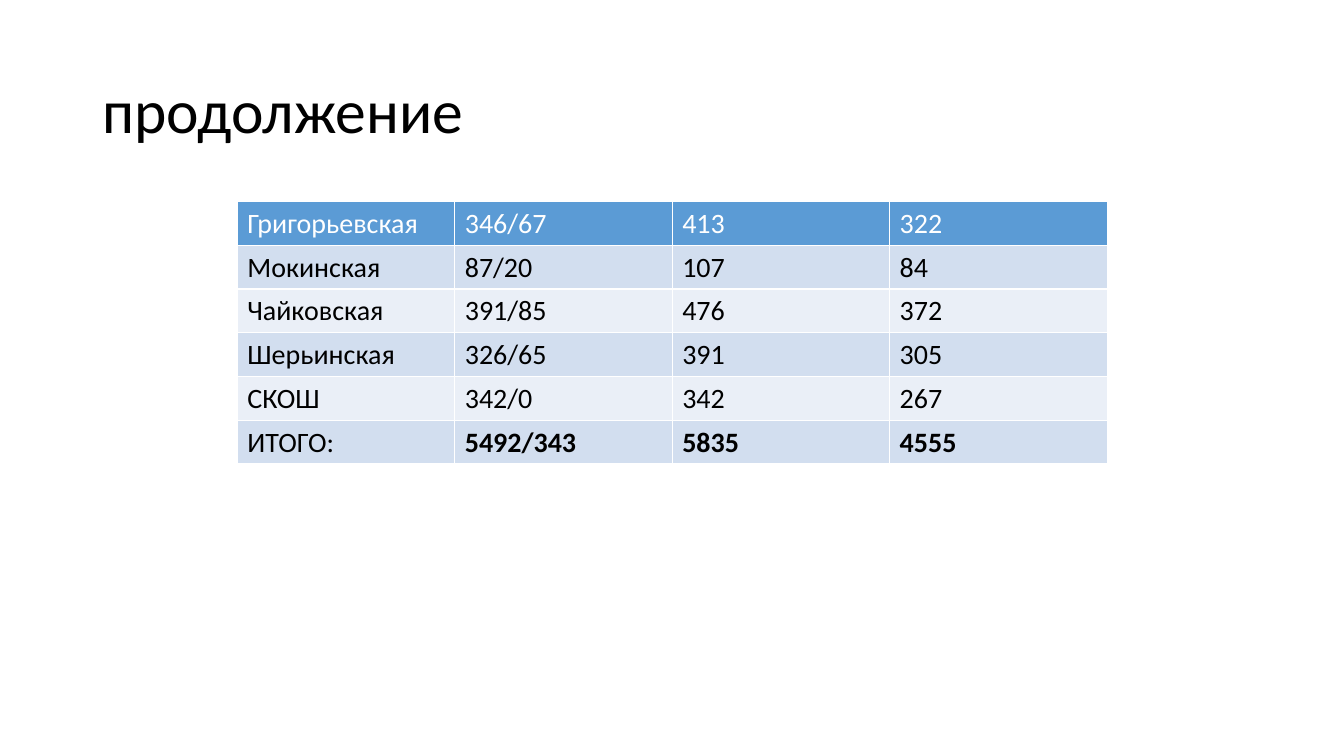
from pptx import Presentation
from pptx.dml.color import RGBColor
from pptx.enum.text import MSO_ANCHOR
from pptx.util import Cm, Pt


def color(value):
    return RGBColor.from_string(value)


class SlideBuilder:
    FONT = "Calibri"
    BLACK, WHITE = "000000", "FFFFFF"
    HEADER, BANDS = "5B9BD5", ("EAEFF7", "D2DEEF")

    def __init__(self, s):
        self.s = s

    def add_text(self, tf, text, size, text_color, bold=False):
        p = tf.paragraphs[0]
        r = p.add_run()
        r.text = text
        style = {"name": self.FONT, "size": Pt(size), "bold": bold}
        for name, value in style.items():
            setattr(r.font, name, value)
        r.font.color.rgb = color(text_color)
        return p

    def title(self, text, left, top, width, height):
        box = self.s.shapes.add_textbox(Cm(left), Cm(top), Cm(width), Cm(height))
        tf = box.text_frame
        layout = {"word_wrap": True, "vertical_anchor": MSO_ANCHOR.MIDDLE}
        for name, value in layout.items():
            setattr(tf, name, value)
        self.add_text(tf, text, 44, self.BLACK).line_spacing = 0.9

    def table(self, rows, left, top, column_width, row_height):
        n_rows, n_cols = len(rows), len(rows[0])
        # The default table style supplies the white cell borders
        table = self.s.shapes.add_table(
            n_rows, n_cols, Cm(left), Cm(top),
            Cm(column_width * n_cols), Cm(row_height * n_rows)).table
        for i, row in enumerate(rows):
            for j, text in enumerate(row):
                cell = table.cell(i, j)
                cell.fill.solid()
                cell.fill.fore_color.rgb = color(self.BANDS[i % 2] if i else self.HEADER)
                is_total = i == n_rows - 1 and j > 0
                self.add_text(cell.text_frame, text, 20,
                              self.BLACK if i else self.WHITE, is_total)


SCHOOLS = [
    ("Григорьевская", "346/67", "413", "322"),
    ("Мокинская", "87/20", "107", "84"),
    ("Чайковская", "391/85", "476", "372"),
    ("Шерьинская", "326/65", "391", "305"),
    ("СКОШ", "342/0", "342", "267"),
    ("ИТОГО:", "5492/343", "5835", "4555"),
]


def main():
    prs = Presentation()
    prs.slide_width, prs.slide_height = Cm(33.87), Cm(19.05)
    blank = prs.slide_layouts[6]
    sb = SlideBuilder(prs.slides.add_slide(blank))

    # Heading
    sb.title("продолжение", 2.33, 1.01, 29.21, 3.68)

    # Schools and totals
    sb.table(SCHOOLS, 5.98, 5.08, 5.48, 1.1)

    prs.save("out.pptx")


if __name__ == "__main__":
    main()
